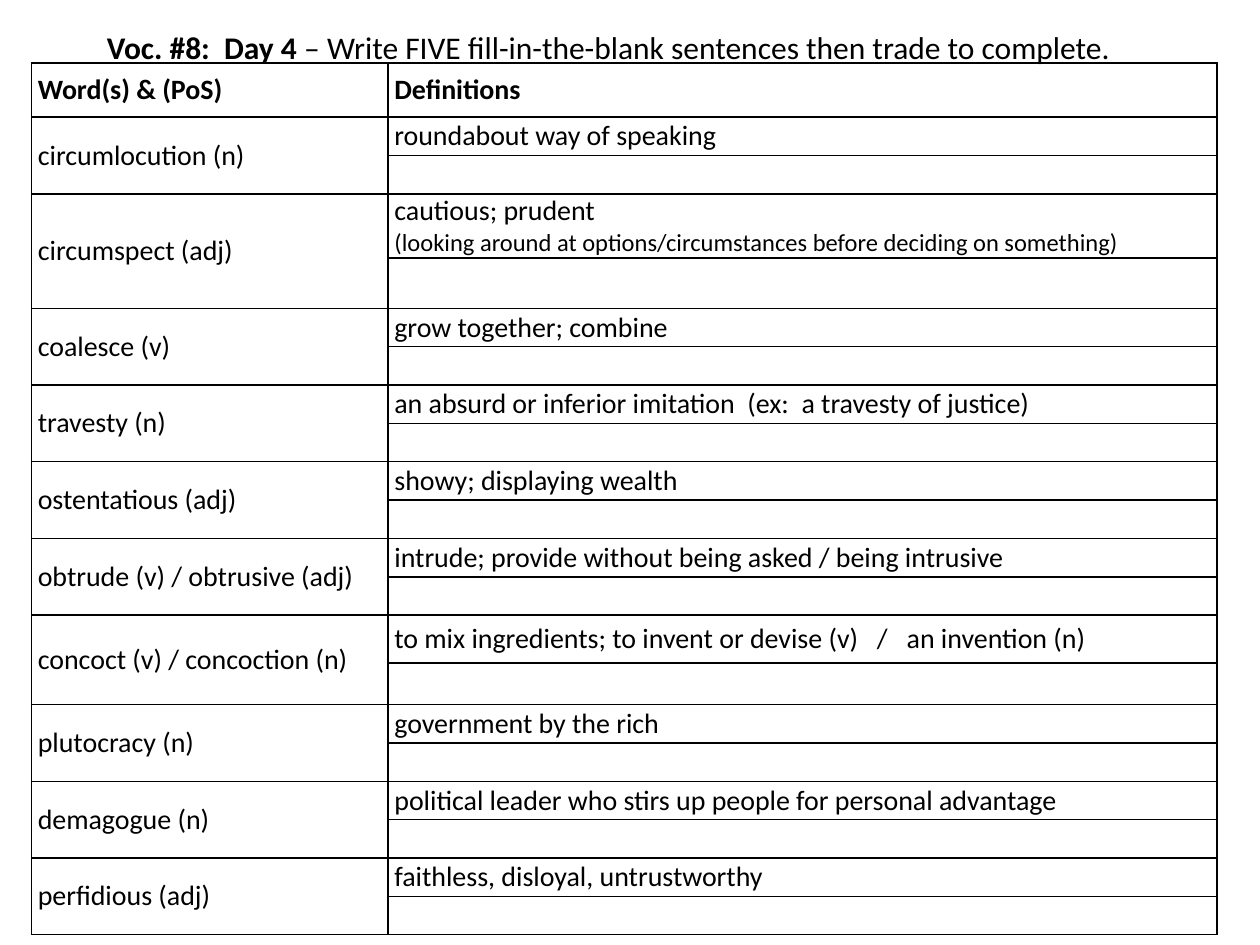
from lxml.etree import SubElement
from pptx import Presentation
from pptx.dml.color import RGBColor
from pptx.enum.text import MSO_ANCHOR, MSO_AUTO_SIZE
from pptx.oxml.ns import qn
from pptx.util import Inches, Pt

COLORS = {"ink": "000000"}
FONT = "Calibri"
COLUMN_WIDTHS = [2.83, 6.58]
TABLE_HEIGHT = 6.91
HEADER_HEIGHT = 0.43
SPECIAL_HEIGHTS = {"circumspect (adj)": (0.5, 0.4), "concoct (v) / concoction (n)": (0.38, 0.33)}
VOCABULARY = [
    ("circumlocution (n)", ["roundabout way of speaking"]),
    ("circumspect (adj)", [
        "cautious; prudent",
        "(looking around at options/circumstances before deciding on something)",
    ]),
    ("coalesce (v)", ["grow together; combine"]),
    ("travesty (n)", ["an absurd or inferior imitation  (ex:  a travesty of justice)"]),
    ("ostentatious (adj)", ["showy; displaying wealth"]),
    ("obtrude (v) / obtrusive (adj)", ["intrude; provide without being asked / being intrusive"]),
    ("concoct (v) / concoction (n)", ["to mix ingredients; to invent or devise (v)   /   an invention (n)"]),
    ("plutocracy (n)", ["government by the rich"]),
    ("demagogue (n)", ["political leader who stirs up people for personal advantage"]),
    ("perfidious (adj)", ["faithless, disloyal, untrustworthy"]),
]


def set_font(font, size, bold=False):
    font.name = FONT
    font.size = Pt(size)
    font.bold = bold
    font.color.rgb = RGBColor.from_string(COLORS["ink"])


def add_borders(cell):
    tcPr = cell._tc.get_or_add_tcPr()
    for i, side in enumerate(("lnL", "lnR", "lnT", "lnB")):
        ln = SubElement(tcPr, qn(f"a:{side}"), w=str(Pt(1)))
        fill = SubElement(ln, qn("a:solidFill"))
        SubElement(fill, qn("a:srgbClr"), val=COLORS["ink"])
        tcPr.insert(i, ln)


def style_cell(cell):
    cell.margin_left = cell.margin_right = Inches(0.05)
    cell.margin_top = cell.margin_bottom = 0
    cell.vertical_anchor = MSO_ANCHOR.MIDDLE
    cell.fill.background()
    add_borders(cell)
    set_font(cell.text_frame.paragraphs[0].font, 16)


def write_cell(cell, lines, bold=False):
    tf = cell.text_frame
    tf.text = "\n".join(lines)
    for i, p in enumerate(tf.paragraphs):
        set_font(p.font, 14 if i else 16, bold)


def row_heights():
    special = sum(map(sum, SPECIAL_HEIGHTS.values()))
    regular_rows = 2 * (len(VOCABULARY) - len(SPECIAL_HEIGHTS))
    regular = (TABLE_HEIGHT - HEADER_HEIGHT - special) / regular_rows
    heights = [HEADER_HEIGHT]
    for word, _ in VOCABULARY:
        heights.extend(SPECIAL_HEIGHTS.get(word, (regular, regular)))
    return heights


def add_vocabulary_table(s):
    heights = row_heights()
    table = s.shapes.add_table(
        len(heights), 2, Inches(0.25), Inches(0.5),
        Inches(sum(COLUMN_WIDTHS)), Inches(TABLE_HEIGHT),
    ).table
    table.first_row = table.horz_banding = False
    for column, width in zip(table.columns, COLUMN_WIDTHS):
        column.width = Inches(width)
    for row, height in zip(table.rows, heights):
        row.height = Inches(height)
    for cell in table.iter_cells():
        style_cell(cell)
    for i, heading in enumerate(("Word(s) & (PoS)", "Definitions")):
        write_cell(table.cell(0, i), [heading], bold=True)
    for i, (word, definition) in enumerate(VOCABULARY):
        top = 1 + 2 * i
        table.cell(top, 0).merge(table.cell(top + 1, 0))
        write_cell(table.cell(top, 0), [word])
        write_cell(table.cell(top, 1), definition)


def add_title(s):
    sp = s.shapes.add_textbox(Inches(0.25), Inches(0.17), Inches(8.83), Inches(0.4))
    tf = sp.text_frame
    tf.word_wrap = True
    tf.auto_size = MSO_AUTO_SIZE.SHAPE_TO_FIT_TEXT
    tf.vertical_anchor = MSO_ANCHOR.MIDDLE
    p = tf.paragraphs[0]
    p._p.get_or_add_pPr().set("indent", str(Inches(0.5)))
    for text, bold in (
        ("Voc. #8:  Day 4 ", True),
        ("– Write FIVE fill-in-the-blank sentences then trade to complete.", False),
    ):
        r = p.add_run()
        r.text = text
        set_font(r.font, 18, bold)


def main():
    prs = Presentation()
    prs.slide_width, prs.slide_height = Inches(10), Inches(7.5)
    s = prs.slides.add_slide(prs.slide_layouts[6])
    add_vocabulary_table(s)
    add_title(s)
    prs.save("out.pptx")


if __name__ == "__main__":
    main()
